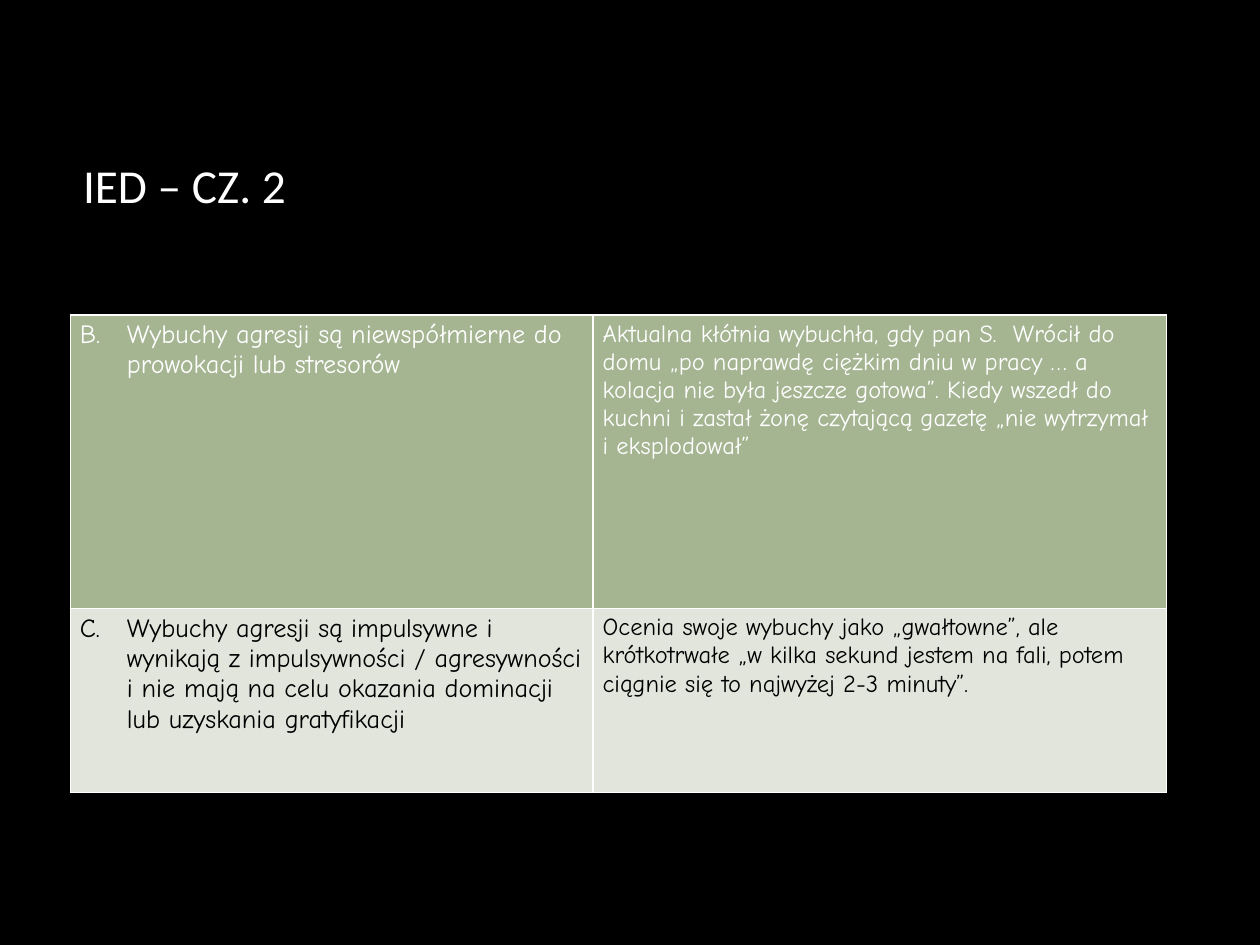
"""Builds the slide "IED – CZ. 2" with a two-row table of criteria and case evidence."""
from dataclasses import dataclass
from typing import Optional

from lxml import etree
from pptx import Presentation
from pptx.dml.color import RGBColor
from pptx.enum import text as txt
from pptx.oxml import ns
from pptx.util import Cm, Pt

BLACK = RGBColor(0x00, 0x00, 0x00)
WHITE = RGBColor(0xFF, 0xFF, 0xFF)
SAGE = RGBColor(0xA5, 0xB5, 0x92)
PALE_SAGE = RGBColor(0xE1, 0xE5, 0xDC)

LEFT = Cm(1.42)
COLUMN_WIDTHS = (Cm(10.54), Cm(11.56))
INDENT = Cm(0.95)


@dataclass(frozen=True)
class Criterion:
    number: int
    rule: str
    evidence: str
    height: int
    fill: RGBColor
    ink: RGBColor


CRITERIA = (
    Criterion(
        2,
        "Wybuchy agresji są niewspółmierne do prowokacji lub stresorów",
        "Aktualna kłótnia wybuchła, gdy pan S.  Wrócił do domu „po naprawdę "
        "ciężkim dniu w pracy … a kolacja nie była jeszcze gotowa”. Kiedy wszedł "
        "do kuchni i zastał żonę czytającą gazetę „nie wytrzymał i eksplodował”",
        Cm(5.92), SAGE, WHITE,
    ),
    Criterion(
        3,
        "Wybuchy agresji są impulsywne i wynikają z impulsywności / agresywności "
        "i nie mają na celu okazania dominacji lub uzyskania gratyfikacji",
        "Ocenia swoje wybuchy jako „gwałtowne”, ale krótkotrwałe „w kilka sekund "
        "jestem na fali, potem ciągnie się to najwyżej 2-3 minuty”.",
        Cm(3.71), PALE_SAGE, BLACK,
    ),
)


def write(frame, content: str, *, size: float, color: RGBColor,
          font: str = "Comic Neue", letter: Optional[int] = None) -> None:
    """Fill a text frame with one formatted paragraph, lettered if asked."""
    paragraph = frame.paragraphs[0]
    paragraph.alignment = txt.PP_ALIGN.LEFT
    run = paragraph.add_run()
    run.text = content
    run.font.name = font
    run.font.size = Pt(size)
    run.font.bold = False
    run.font.color.rgb = color
    if letter is not None:
        properties = paragraph._p.get_or_add_pPr()
        properties.set("marL", str(INDENT))
        properties.set("indent", str(-INDENT))
        etree.SubElement(properties, ns.qn("a:buFont"), typeface="+mj-lt")
        etree.SubElement(properties, ns.qn("a:buAutoNum"),
                         type="alphaUcPeriod", startAt=str(letter))


def outline(cell, color: RGBColor, width: float) -> None:
    """Draw the four borders of a cell."""
    properties = cell._tc.get_or_add_tcPr()
    for position, side in enumerate("LRTB"):
        border = etree.Element(ns.qn(f"a:ln{side}"), w=str(Pt(width)))
        fill = etree.SubElement(border, ns.qn("a:solidFill"))
        etree.SubElement(fill, ns.qn("a:srgbClr"), val=str(color))
        properties.insert(position, border)


def style_cell(cell, fill: RGBColor) -> None:
    """Set the fill, margins and borders of a cell."""
    cell.fill.solid()
    cell.fill.fore_color.rgb = fill
    cell.margin_left = cell.margin_right = Cm(0.19)
    cell.margin_top = cell.margin_bottom = Cm(0.1)
    outline(cell, WHITE, 1)


def add_criteria(slide) -> None:
    """Add the table with one row per criterion."""
    table = slide.shapes.add_table(
        len(CRITERIA), len(COLUMN_WIDTHS), LEFT, Cm(6.35),
        sum(COLUMN_WIDTHS), sum(item.height for item in CRITERIA)).table
    table.horz_banding = False
    for column, width in zip(table.columns, COLUMN_WIDTHS):
        column.width = width
    for row, item in zip(table.rows, CRITERIA):
        row.height = item.height
        rule, evidence = row.cells
        for cell in (rule, evidence):
            style_cell(cell, item.fill)
        write(rule.text_frame, item.rule, size=15, color=item.ink, letter=item.number)
        write(evidence.text_frame, item.evidence, size=14, color=item.ink)


def main() -> None:
    """Build and save the presentation."""
    deck = Presentation()
    deck.slide_width, deck.slide_height = Cm(25.4), Cm(19.05)
    slide = deck.slides.add_slide(deck.slide_layouts[5])
    slide.background.fill.solid()
    slide.background.fill.fore_color.rgb = BLACK

    heading = slide.shapes.title
    heading.left, heading.top = LEFT, Cm(1.7)
    heading.width, heading.height = Cm(21.11), Cm(4.04)
    heading.text_frame.vertical_anchor = txt.MSO_ANCHOR.MIDDLE
    write(heading.text_frame, "IED – CZ. 2", size=27, color=WHITE, font="Calibri")

    add_criteria(slide)
    deck.save("out.pptx")


if __name__ == "__main__":
    main()
